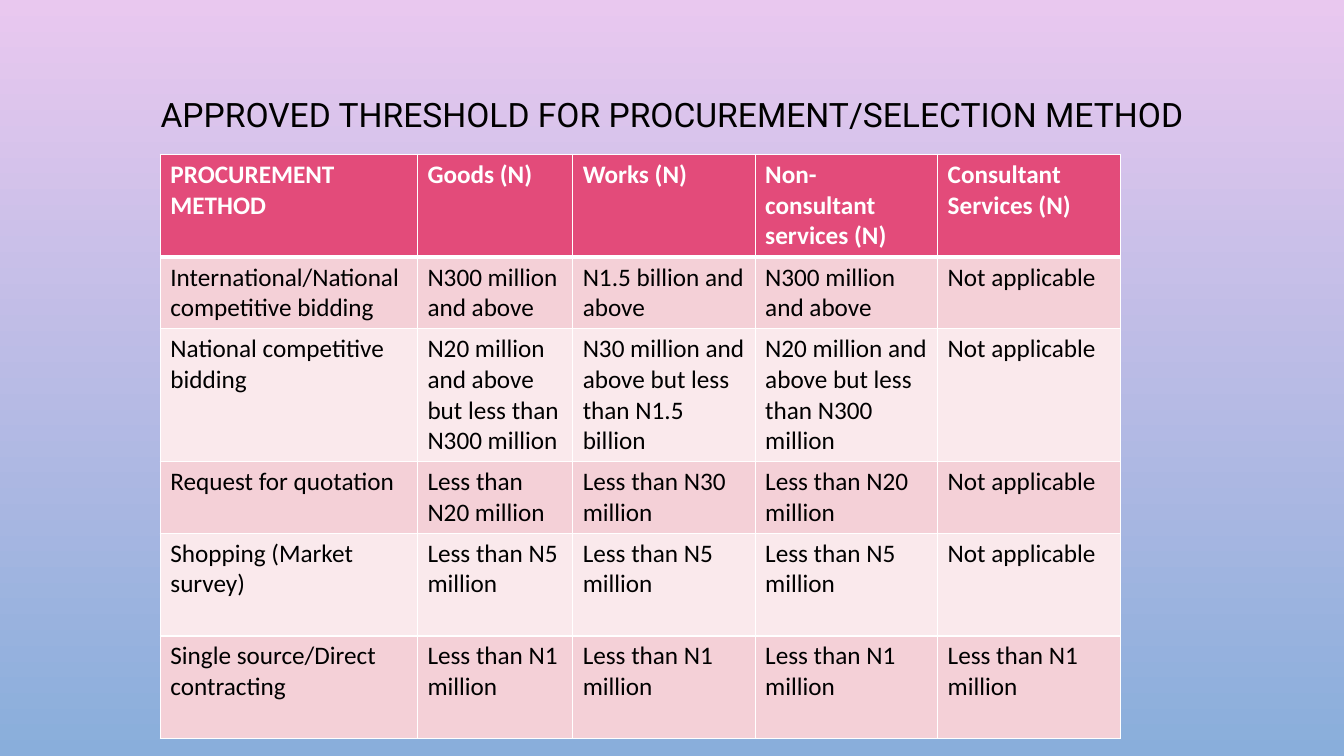
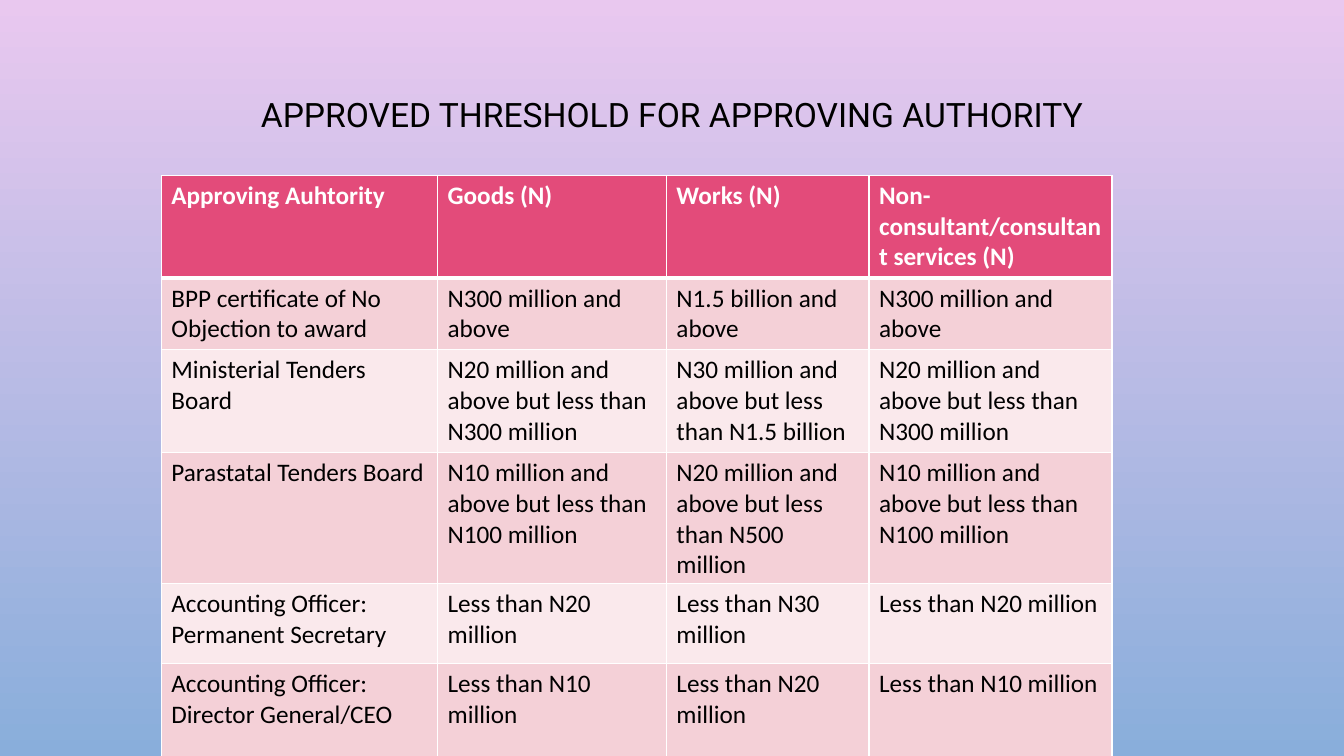
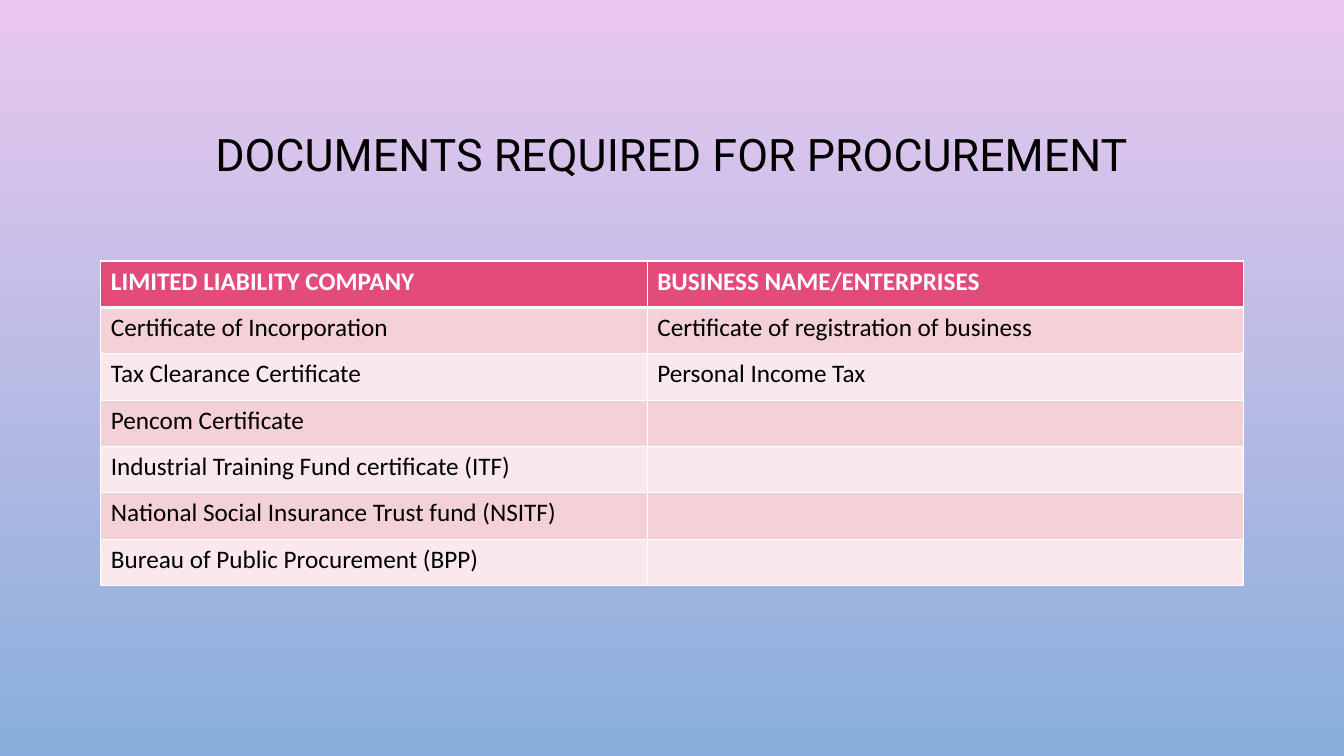
from lxml.etree import SubElement
from pptx import Presentation
from pptx.dml.color import RGBColor as Rgb
from pptx.enum.text import MSO_ANCHOR as Anchor, PP_ALIGN as Align
from pptx.oxml.ns import qn
from pptx.util import Inches, Pt

WIDTH, HEIGHT, MARGIN = 13.33, 7.5, 1
TITLE_TOP = 0.68
COLORS = {
    "sky_top": "E9C8EF",
    "sky_bottom": "89AEDB",
    "header": "E34B7A",
    "band_dark": "F4D0D7",
    "band_light": "FAE9EC",
    "border": "FFFFFF",
    "header_text": "FFFFFF",
    "text": "000000",
}
TITLE_FONT, TABLE_FONT, TABLE_SIZE = "Roboto", "Calibri", 18
THIN, THICK = 1, 3
NOT_APPLICABLE = "Not applicable"


def color(name):
    return Rgb.from_string(COLORS[name])


def above(amount):
    return f"{amount} and above"


def between(low, high):
    return f"{low} and above but less than {high}"


def below(amount):
    return f"Less than {amount}"


def add_run(paragraph, text, font_name, size, color_name, bold=False):
    run = paragraph.add_run()
    run.text = text
    font = run.font
    font.name, font.size, font.bold = font_name, Pt(size), bold
    font.color.rgb = color(color_name)


def paint_background(master):
    fill = master.background.fill
    fill.gradient()
    fill.gradient_angle = 270
    for stop, name in zip(fill.gradient_stops, ("sky_top", "sky_bottom")):
        stop.color.rgb = color(name)


def add_title(slide, text, size, height):
    box = slide.shapes.add_textbox(Inches(MARGIN), Inches(TITLE_TOP),
                                   Inches(WIDTH - 2 * MARGIN), Inches(height))
    frame = box.text_frame
    frame.word_wrap = True
    frame.vertical_anchor = Anchor.MIDDLE
    paragraph = frame.paragraphs[0]
    paragraph.alignment = Align.CENTER
    paragraph.line_spacing = 0.9
    add_run(paragraph, text, TITLE_FONT, size, "text")


def add_borders(cell, top, bottom):
    """Draw the four edges; must come before the cell's fill."""
    properties = cell._tc.get_or_add_tcPr()
    for edge, points in (("L", THIN), ("R", THIN), ("T", top), ("B", bottom)):
        line = SubElement(properties, qn(f"a:ln{edge}"), w=str(Pt(points)))
        solid = SubElement(line, qn("a:solidFill"))
        SubElement(solid, qn("a:srgbClr"), val=COLORS["border"])


def style_cell(cell, text, row):
    is_header = row == 0
    add_borders(cell, THICK if row == 1 else THIN, THICK if is_header else THIN)
    cell.fill.solid()
    band = "band_dark" if row % 2 else "band_light"
    cell.fill.fore_color.rgb = color("header" if is_header else band)
    paragraph = cell.text_frame.paragraphs[0]
    if text:
        add_run(paragraph, text, TABLE_FONT, TABLE_SIZE,
                "header_text" if is_header else "text", is_header)
    else:
        paragraph.font.size = Pt(TABLE_SIZE)


def add_grid(slide, left, top, columns, heights, content):
    table = slide.shapes.add_table(
        len(heights), len(columns), Inches(left), Inches(top),
        Inches(sum(columns)), Inches(sum(heights))).table
    for column, width in zip(table.columns, columns):
        column.width = Inches(width)
    for row, height in zip(table.rows, heights):
        row.height = Inches(height)
    for r, texts in enumerate(content):
        for c, text in enumerate(texts):
            style_cell(table.cell(r, c), text, r)


METHODS = [
    ["PROCUREMENT METHOD", "Goods (N)", "Works (N)",
     "Non- consultant services (N)", "Consultant Services (N)"],
    ["International/National competitive bidding", above("N300 million"),
     above("N1.5 billion"), above("N300 million"), NOT_APPLICABLE],
    ["National competitive bidding", between("N20 million", "N300 million"),
     between("N30 million", "N1.5 billion"),
     between("N20 million", "N300 million"), NOT_APPLICABLE],
    ["Request for quotation", below("N20 million"), below("N30 million"),
     below("N20 million"), NOT_APPLICABLE],
    ["Shopping (Market survey)", *[below("N5 million")] * 3, NOT_APPLICABLE],
    ["Single source/Direct contracting", *[below("N1 million")] * 4],
]

AUTHORITIES = [
    ["Approving Auhtority", "Goods (N)", "Works (N)",
     "Non- consultant/consultant services (N)"],
    ["BPP certificate of No Objection to award", above("N300 million"),
     above("N1.5 billion"), above("N300 million")],
    ["Ministerial Tenders Board", between("N20 million", "N300 million"),
     between("N30 million", "N1.5 billion"),
     between("N20 million", "N300 million")],
    ["Parastatal Tenders Board", between("N10 million", "N100 million"),
     between("N20 million", "N500 million"),
     between("N10 million", "N100 million")],
    ["Accounting Officer: Permanent Secretary", below("N20 million"),
     below("N30 million"), below("N20 million")],
    ["Accounting Officer: Director General/CEO", below("N10 million"),
     below("N20 million"), below("N10 million")],
]

DOCUMENTS = [
    ["LIMITED LIABILITY COMPANY", "BUSINESS NAME/ENTERPRISES"],
    ["Certificate of Incorporation", "Certificate of registration of business"],
    ["Tax Clearance Certificate", "Personal Income Tax"],
    ["Pencom Certificate", ""],
    ["Industrial Training Fund certificate (ITF)", ""],
    ["National Social Insurance Trust fund (NSITF)", ""],
    ["Bureau of Public Procurement (BPP)", ""],
]

SLIDES = [
    {"title": ("APPROVED THRESHOLD FOR PROCUREMENT/SELECTION METHOD", 24, 0.95),
     "grid": (1.59, 1.53, [2.55, 1.54, 1.81, 1.81, 1.81],
              [1.02, 0.71, 1.32, 0.71, 1.02, 1.02], METHODS)},
    {"title": ("APPROVED THRESHOLD FOR APPROVING AUTHORITY", 24, 0.95),
     "grid": (1.6, 1.74, [2.74, 2.27, 2.01, 2.41],
              [1.02, 0.71, 1.02, 1.02, 0.79, 1.02], AUTHORITIES)},
    {"title": ("DOCUMENTS REQUIRED FOR PROCUREMENT", 32, 1.75),
     "grid": (MARGIN, 2.59, [5.42, 5.91],
              [0.46] * len(DOCUMENTS), DOCUMENTS)},
]


def main():
    deck = Presentation()
    deck.slide_width, deck.slide_height = Inches(WIDTH), Inches(HEIGHT)
    paint_background(deck.slide_master)
    blank = deck.slide_layouts[6]
    for parts in SLIDES:
        slide = deck.slides.add_slide(blank)
        add_title(slide, *parts["title"])
        add_grid(slide, *parts["grid"])
    deck.save("out.pptx")


if __name__ == "__main__":
    main()
